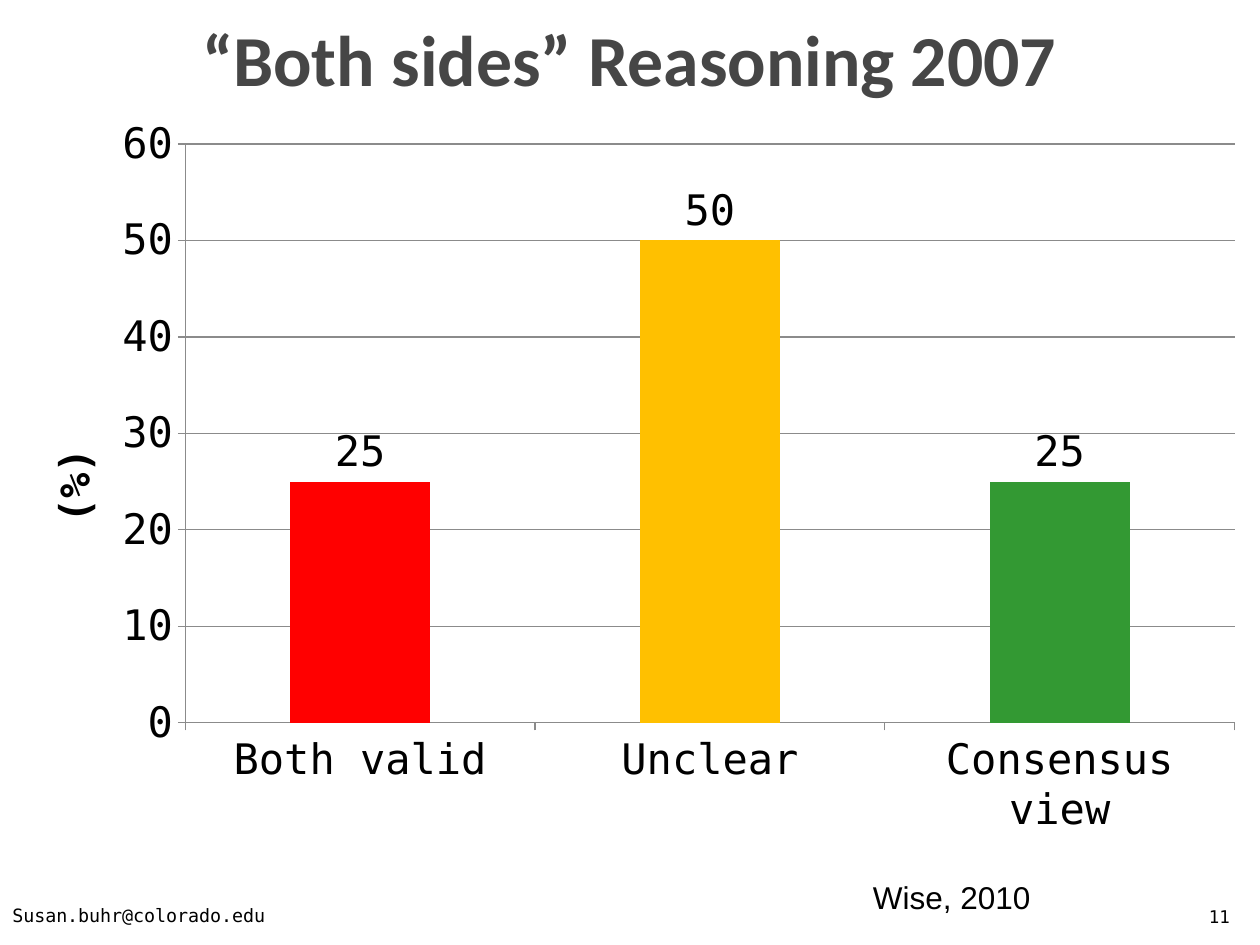
from dataclasses import dataclass

from lxml import etree
from pptx import Presentation
from pptx import util as u
from pptx.chart.data import CategoryChartData
from pptx.dml.color import RGBColor
from pptx.enum import chart as charts, text
from pptx.oxml.ns import qn

COLORS = {
    "title": "464646",
    "text": "000000",
    "grid": "8B8B8B",
    "both": "FF0000",
    "unclear": "FFC000",
    "consensus": "339933",
}
MONO = "DejaVu Sans Mono"


@dataclass
class Label:
    wording: str
    left: float
    top: float
    width: float
    height: float
    size: float
    font: str = MONO
    color: str = "text"
    bold: bool = False
    align: text.PP_ALIGN = text.PP_ALIGN.LEFT
    anchor: text.MSO_ANCHOR = text.MSO_ANCHOR.BOTTOM


@dataclass
class Bar:
    category: str
    percent: int
    color: str


LABELS = [
    Label("“Both sides” Reasoning 2007", 0.5, -0.17, 9, 1.25, 41, "Calibri", "title",
          True, text.PP_ALIGN.CENTER, text.MSO_ANCHOR.MIDDLE),
    Label("Wise, 2010", 6.83, 6.92, 2.67, 0.42, 18, "Arial",
          anchor=text.MSO_ANCHOR.TOP),
    Label("11", 9.46, 7.01, 0.4, 0.4, 10, align=text.PP_ALIGN.RIGHT),
    Label("Susan.buhr@colorado.edu", 0, 6.83, 7.36, 0.57, 10.5),
]
BARS = [
    Bar("Both valid", 25, "both"),
    Bar("Unclear", 50, "unclear"),
    Bar("Consensus view", 25, "consensus"),
]


def rgb(name: str) -> RGBColor:
    return RGBColor.from_string(COLORS[name])


def set_all(target, values: dict) -> None:
    for name, value in values.items():
        setattr(target, name, value)


def set_font(font, size: float, name: str = MONO, color: str = "text",
             bold: bool = False) -> None:
    set_all(font, {"size": u.Pt(size), "name": name, "bold": bold})
    font.color.rgb = rgb(color)


def set_line(line) -> None:
    line.color.rgb = rgb("grid")
    line.width = u.Pt(0.75)


def add_label(page, label: Label) -> None:
    box = page.shapes.add_textbox(*map(u.Inches, (label.left, label.top,
                                                  label.width, label.height)))
    set_all(box.text_frame, {"word_wrap": True, "vertical_anchor": label.anchor})
    para = box.text_frame.paragraphs[0]
    para.alignment = label.align
    span = para.add_run()
    span.text = label.wording
    set_font(span.font, label.size, label.font, label.color, label.bold)


def set_layout(parent, values: dict) -> None:
    """Place a chart part by fractions of the chart's size."""
    layout = parent.find(qn("c:layout"))
    if layout is None:
        layout = etree.Element(qn("c:layout"))
        parent.insert(0, layout)
    manual = etree.SubElement(layout, qn("c:manualLayout"))
    for name, value in values.items():
        etree.SubElement(manual, qn(f"c:{name}")).set("val", str(value))


def add_bar_chart(page, bars: list[Bar]) -> None:
    data = CategoryChartData()
    data.categories = [bar.category for bar in bars]
    data.add_series("Series 1", [bar.percent for bar in bars])
    chart = page.shapes.add_chart(
        charts.XL_CHART_TYPE.COLUMN_CLUSTERED,
        *map(u.Inches, (0, 0.83, 10, 5.92)), data).chart
    set_all(chart, {"has_legend": False, "has_title": False})
    set_font(chart.font, 10)

    # Columns and their values
    plot = chart.plots[0]
    set_all(plot, {"gap_width": 150, "vary_by_categories": False,
                   "has_data_labels": True})
    set_all(plot.data_labels, {"show_value": True,
                               "position": charts.XL_LABEL_POSITION.OUTSIDE_END})
    set_font(plot.data_labels.font, 24)
    series = plot.series[0]
    series.format.fill.solid()
    series.format.fill.fore_color.rgb = rgb("consensus")
    for index, bar in enumerate(bars):
        fill = series.points[index].format.fill
        fill.solid()
        fill.fore_color.rgb = rgb(bar.color)

    # Axes
    for axis in (chart.category_axis, chart.value_axis):
        axis.major_tick_mark = charts.XL_TICK_MARK.OUTSIDE
        set_font(axis.tick_labels.font, 24)
        set_line(axis.format.line)
    axis = chart.value_axis
    set_all(axis, {"minimum_scale": 0, "maximum_scale": 60, "major_unit": 10,
                   "has_major_gridlines": True, "has_title": True})
    set_line(axis.major_gridlines.format.line)
    frame = axis.axis_title.text_frame
    span = frame.paragraphs[0].add_run()
    span.text = "(%)"
    set_font(span.font, 24, bold=True)
    body = frame._txBody.find(qn("a:bodyPr"))
    body.set("rot", "-5400000")
    body.set("vert", "horz")

    # Places of the axis title and the plot
    set_layout(axis.axis_title._element,
               {"xMode": "edge", "yMode": "edge", "x": 0.03, "y": 0.45})
    set_layout(chart._chartSpace.chart.plotArea,
               {"layoutTarget": "inner", "xMode": "edge", "yMode": "edge",
                "x": 0.147, "y": 0.053, "w": 0.833, "h": 0.776})


def main() -> None:
    deck = Presentation()
    deck.slide_width, deck.slide_height = u.Inches(10), u.Inches(7.5)
    page = deck.slides.add_slide(deck.slide_layouts[6])
    add_bar_chart(page, BARS)
    for label in LABELS:
        add_label(page, label)
    deck.save("out.pptx")


if __name__ == "__main__":
    main()
